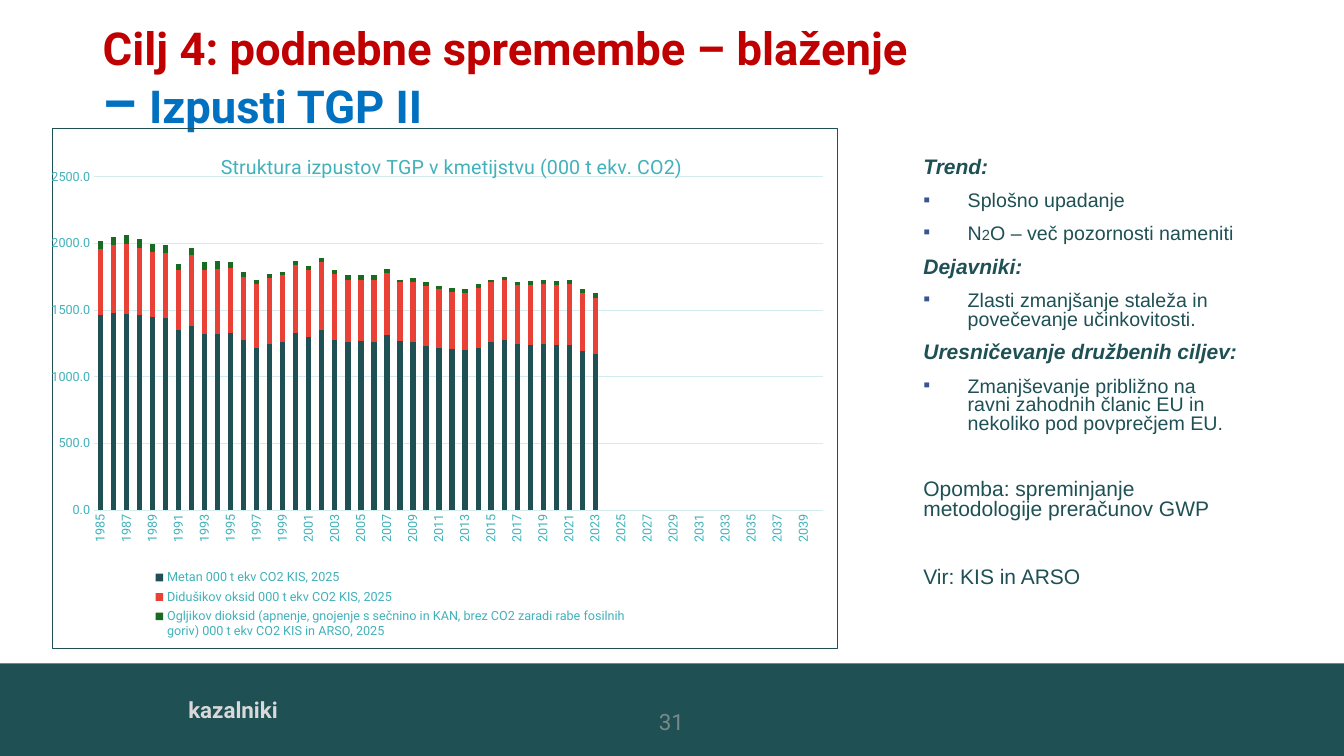
"""Build the slide on greenhouse gas emissions from agriculture."""
import pptx
import pptx.chart.data
import pptx.dml.color
import pptx.enum.chart
import pptx.enum.shapes
import pptx.enum.text
import pptx.oxml
import pptx.oxml.ns
import pptx.util

Inches, Pt = pptx.util.Inches, pptx.util.Pt
qn = pptx.oxml.ns.qn
DARK, TEAL, GRID, BLUE = "1E5054", "42B1BA", "D3EDEF", "0070C0"

HEAD = dict(size=15, name="Arial", color=DARK, bold=True, italic=True)
BODY = dict(size=14, name="Arial", color=DARK)
NOTE = dict(BODY, size=15)
TITLE = dict(size=32.4, name="Roboto", color="C00000", bold=True)
FOOTER = dict(size=16, name="Roboto", color="D9D9D9", bold=True)
NUMBER = dict(size=16, name="Roboto", color="7B888A")
AXIS = dict(size=9, name="Roboto", color=TEAL)

TITLE_LINES = [
    [("Cilj 4: podnebne spremembe – blaženje", TITLE)],
    [("–", dict(TITLE, size=39.6, color=BLUE)),
     ("\u00a0", dict(TITLE, color="215F9A")),
     ("Izpusti TGP II", dict(TITLE, color=BLUE))],
]
COMMENTS = [
    ([("Trend:", HEAD)], False, 0),
    ([("Splošno upadanje", BODY)], True, 10),
    ([("N", BODY), ("2", dict(BODY, size=10.5)),
      ("O – več pozornosti nameniti", BODY)], True, 10),
    ([("Dejavniki:", HEAD)], False, 10),
    ([("Zlasti zmanjšanje staleža in povečevanje učinkovitosti.", BODY)], True, 10),
    ([("Uresničevanje družbenih ciljev:", HEAD)], False, 10),
    ([("Zmanjševanje približno na ravni zahodnih članic EU in nekoliko pod "
       "povprečjem EU.", BODY)], True, 10),
    ([("Opomba: spreminjanje metodologije preračunov GWP", NOTE)], False, 33),
    ([("Vir: KIS in ARSO", NOTE)], False, 34),
]
CHART_TITLE = "Struktura izpustov TGP v kmetijstvu (000 t ekv. CO2)"
YEARS = [str(year) for year in range(1985, 2041)]
SERIES = [
    ("Metan 000 t ekv CO2 KIS, 2025", DARK,
     [1460, 1480, 1470, 1460, 1450, 1440, 1350, 1380, 1320, 1320, 1330, 1280, 1220,
      1250, 1260, 1330, 1300, 1350, 1280, 1260, 1270, 1260, 1310, 1270, 1260, 1230,
      1220, 1210, 1200, 1220, 1260, 1280, 1250, 1240, 1250, 1240, 1240, 1190, 1170]),
    ("Didušikov oksid 000 t ekv CO2 KIS, 2025", "EA4136",
     [500, 510, 530, 510, 490, 490, 450, 530, 480, 490, 490, 470, 480,
      490, 500, 510, 500, 510, 490, 470, 460, 470, 470, 440, 450, 450,
      440, 430, 430, 450, 450, 450, 440, 450, 450, 450, 460, 440, 420]),
    ("Ogljikov dioksid (apnenje, gnojenje s sečnino in KAN, brez CO2 zaradi rabe "
     "fosilnih goriv) 000 t ekv CO2 KIS in ARSO, 2025", "196B24",
     [60, 60, 60, 60, 60, 60, 50, 60, 60, 60, 40, 40, 30,
      30, 30, 30, 30, 30, 30, 30, 30, 30, 30, 20, 30, 30,
      20, 30, 30, 30, 20, 20, 20, 30, 30, 30, 30, 30, 40]),
]


def rgb(code):
    return pptx.dml.color.RGBColor.from_string(code)


def set_font(font, style):
    for key, value in style.items():
        if key == "color":
            font.color.rgb = rgb(value)
        else:
            setattr(font, key, Pt(value) if key == "size" else value)


def add_spans(para, spans):
    for text, style in spans:
        span = para.add_run()
        span.text = text
        set_font(span.font, style)


def add_box(page, place, anchor="TOP"):
    frame = page.shapes.add_textbox(*map(Inches, place)).text_frame
    frame.word_wrap = True
    frame.vertical_anchor = getattr(pptx.enum.text.MSO_ANCHOR, anchor)
    return frame


def xml(tag, content="", attributes=""):
    spaces = pptx.oxml.ns.nsdecls("a", "c")
    return pptx.oxml.parse_xml(f"<{tag} {spaces} {attributes}>{content}</{tag}>")


def set_bullet(para):
    properties = para._p.get_or_add_pPr()
    properties.set("marL", str(Inches(0.44)))
    properties.set("indent", str(-Inches(0.44)))
    properties.append(xml("a:buClr", '<a:srgbClr val="375592"/>'))
    properties.append(xml("a:buFont", attributes='typeface="Arial"'))
    properties.append(xml("a:buChar", attributes='char="▪"'))


def set_layout(element, index, sizes, target=""):
    for old in element.findall(qn("c:layout")):
        element.remove(old)
    parts = target + '<c:xMode val="edge"/><c:yMode val="edge"/>'
    parts += "".join(f'<c:{key} val="{value}"/>' for key, value in sizes.items())
    element.insert(index, xml("c:layout", f"<c:manualLayout>{parts}</c:manualLayout>"))


def add_emissions_chart(page):
    data = pptx.chart.data.CategoryChartData(number_format="0.0")
    data.categories = YEARS
    for name, color, values in SERIES:
        data.add_series(name, values + [None] * (len(YEARS) - len(values)))
    kinds = pptx.enum.chart
    chart = page.shapes.add_chart(kinds.XL_CHART_TYPE.COLUMN_STACKED,
                                  *map(Inches, (0.51, 1.27, 7.8, 5.17)), data).chart
    set_font(chart.font, dict(size=10, name="Roboto", color=DARK))
    plot = chart.plots[0]
    plot.gap_width, plot.overlap, plot.vary_by_categories = 150, 100, False
    for series, (name, color, values) in zip(plot.series, SERIES):
        series.format.fill.solid()
        series.format.fill.fore_color.rgb = rgb(color)

    years, amounts = chart.category_axis, chart.value_axis
    for axis in (years, amounts):
        axis.major_tick_mark = axis.minor_tick_mark = kinds.XL_TICK_MARK.NONE
        set_font(axis.tick_labels.font, AXIS)
    amounts.minimum_scale, amounts.maximum_scale, amounts.major_unit = 0, 2500, 500
    amounts.tick_labels.number_format = "0.0"
    amounts.tick_labels.number_format_is_linked = False
    amounts.format.line.fill.background()
    for line in (years.format.line, amounts.major_gridlines.format.line):
        line.color.rgb, line.width = rgb(GRID), Pt(0.75)
    years_xml = years._element
    years_xml.find(qn("c:txPr")).find(qn("a:bodyPr")).set("rot", "-5400000")
    years_xml.find(qn("c:noMultiLvlLbl")).addprevious(
        xml("c:tickLblSkip", attributes='val="2"'))

    chart.has_title = chart.has_legend = True
    add_spans(chart.chart_title.text_frame.paragraphs[0],
              [(CHART_TITLE, dict(AXIS, size=14, bold=False))])
    chart.legend.position = kinds.XL_LEGEND_POSITION.BOTTOM
    chart.legend.include_in_layout = False
    set_font(chart.legend.font, AXIS)

    body = chart.element.find(qn("c:chart"))
    set_layout(body.find(qn("c:title")), 1, dict(x=0.21, y=0.04))
    set_layout(body.find(qn("c:legend")), 1, dict(x=0.12, y=0.84, w=0.62, h=0.15))
    set_layout(body.find(qn("c:plotArea")), 0,
               dict(x=0.053, y=0.093, w=0.929, h=0.641),
               '<c:layoutTarget val="inner"/>')
    body.addnext(xml("c:spPr", f'<a:noFill/><a:ln w="{Pt(0.75)}"><a:solidFill>'
                     f'<a:srgbClr val="{DARK}"/></a:solidFill></a:ln>'))


def main():
    deck = pptx.Presentation()
    deck.slide_width, deck.slide_height = Inches(13.33), Inches(7.5)
    page = deck.slides.add_slide(deck.slide_layouts[6])

    band = page.shapes.add_shape(pptx.enum.shapes.MSO_SHAPE.RECTANGLE,
                                 *map(Inches, (0, 6.58, 13.33, 0.92)))
    band.shadow.inherit = False
    band.fill.solid()
    band.fill.fore_color.rgb = rgb(DARK)
    band.line.fill.background()
    footer = add_box(page, (1.77, 6.86, 9.9, 0.37))
    add_spans(footer.paragraphs[0], [("kazalniki", FOOTER)])
    number = add_box(page, (5.16, 6.96, 3, 0.4), "MIDDLE").paragraphs[0]
    number.alignment = pptx.enum.text.PP_ALIGN.CENTER
    add_spans(number, [("31", NUMBER)])

    heading = add_box(page, (0.92, 0.4, 9.72, 0.81), "MIDDLE").paragraphs[0]
    heading.line_spacing = 0.9
    for index, spans in enumerate(TITLE_LINES):
        if index:
            heading.add_line_break()
        add_spans(heading, spans)

    add_emissions_chart(page)

    comments = add_box(page, (9.06, 1.52, 3.36, 4.67))
    for index, (spans, bulleted, gap) in enumerate(COMMENTS):
        para = comments.add_paragraph() if index else comments.paragraphs[0]
        para.line_spacing, para.space_before = 0.8, Pt(gap)
        if bulleted:
            set_bullet(para)
        add_spans(para, spans)
    deck.save("out.pptx")


if __name__ == "__main__":
    main()
